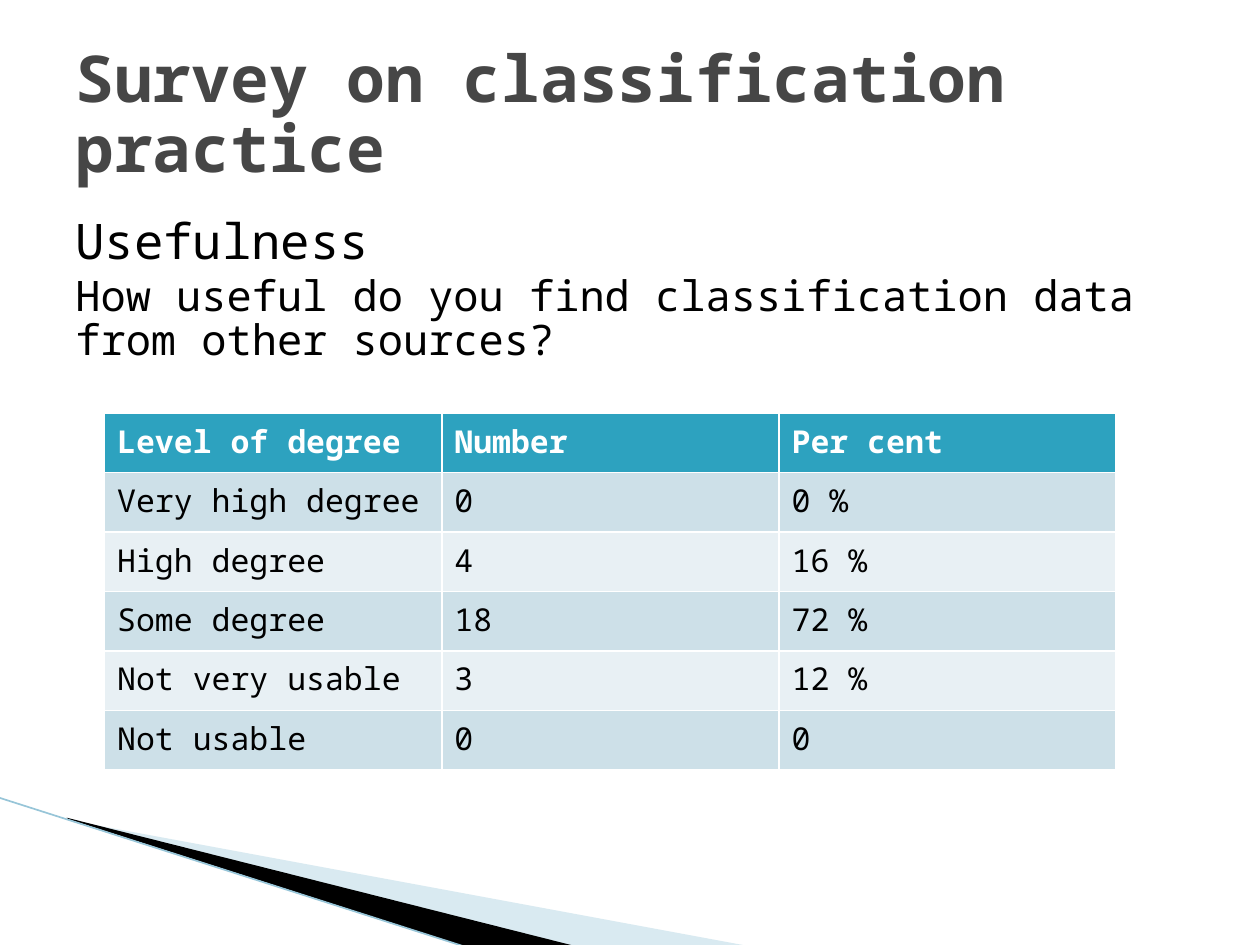
from lxml.etree import SubElement
from pptx import Presentation
from pptx.dml.color import RGBColor
from pptx.enum.shapes import MSO_CONNECTOR as Connector
from pptx.enum.text import MSO_ANCHOR as Anchor
from pptx.oxml.ns import qn
from pptx.util import Pt

PX = 9144  # EMU per px, 100 px to the inch
FONT = "Noto Sans Mono"
COLORS = {
    "title": "464646", "text": "000000", "white": "FFFFFF",
    "header": "2DA2BF", "odd_row": "CDE0E8", "even_row": "E8F0F4",
    "pale_wedge": "A0CBDC", "dark_wedge": "000000", "edge": "97C5D8",
}
ROWS = [
    ("Level of degree", "Number", "Per cent"),
    ("Very high degree", "0", "0 %"),
    ("High degree", "4", "16 %"),
    ("Some degree", "18", "72 %"),
    ("Not very usable", "3", "12 %"),
    ("Not usable", "0", "0"),
]


def color(name):
    return RGBColor.from_string(COLORS[name])


class SlideBuilder:
    def __init__(self, slide):
        self.slide = slide

    def fill_paragraph(self, paragraph, text, size, color_name="text", bold=False,
                       **spacing):
        run = paragraph.add_run()
        run.text = text
        run.font.color.rgb = color(color_name)
        for target, values in (
            (run.font, {"name": FONT, "size": Pt(size), "bold": bold}),
            (paragraph, spacing),
        ):
            for name, value in values.items():
                setattr(target, name, value)

    def text(self, box, lines, anchor=Anchor.TOP):
        """Add a text box; each line is a dict of arguments for fill_paragraph."""
        shape = self.slide.shapes.add_textbox(*(value * PX for value in box))
        frame = shape.text_frame
        frame.word_wrap = True
        frame.vertical_anchor = anchor
        for index, line in enumerate(lines):
            paragraph = frame.add_paragraph() if index else frame.paragraphs[0]
            self.fill_paragraph(paragraph, **line)

    def wedge(self, points, color_name, opacity=100):
        builder = self.slide.shapes.build_freeform(*points[0], scale=PX)
        builder.add_line_segments(points[1:], close=True)
        shape = builder.convert_to_shape()
        shape.shadow.inherit = False
        shape.line.fill.background()
        shape.fill.solid()
        shape.fill.fore_color.rgb = color(color_name)
        if opacity < 100:
            rgb = shape._element.spPr.find(".//" + qn("a:srgbClr"))
            SubElement(rgb, qn("a:alpha"), val=str(opacity * 1000))

    def line(self, start, end, color_name, width):
        ends = (value * PX for value in (*start, *end))
        connector = self.slide.shapes.add_connector(Connector.STRAIGHT, *ends)
        connector.line.color.rgb = color(color_name)
        connector.line.width = Pt(width)
        SubElement(connector._element.spPr, qn("a:effectLst"))

    def table(self, box, rows, size):
        shape = self.slide.shapes.add_table(
            len(rows), len(rows[0]), *(value * PX for value in box))
        for row_index, row in enumerate(rows):
            is_header = row_index == 0
            fill = "header" if is_header else "odd_row" if row_index % 2 else "even_row"
            for column_index, text in enumerate(row):
                cell = shape.table.cell(row_index, column_index)
                cell.fill.solid()
                cell.fill.fore_color.rgb = color(fill)
                self.fill_paragraph(cell.text_frame.paragraphs[0], text, size,
                                    "white" if is_header else "text", is_header)


def main():
    presentation = Presentation()
    presentation.slide_width = 1000 * PX
    presentation.slide_height = 750 * PX
    builder = SlideBuilder(presentation.slides.add_slide(presentation.slide_layouts[6]))

    builder.wedge([(55, 651), (595, 751), (456, 751), (55, 650)], "pale_wedge", 40)
    builder.wedge([(53, 649), (457, 751), (372, 752), (54, 650)], "dark_wedge")
    builder.line((-1, 633), (371, 752), "edge", 0.95)

    builder.text((50, 162, 900, 495), [
        {"text": "Usefulness", "size": 28},
        {"text": "How useful do you find classification data from other sources?",
         "size": 24, "space_before": Pt(4), "line_spacing": 0.88},
    ])
    builder.text((50, 30, 900, 125), [
        {"text": "Survey on classification practice", "size": 36.9,
         "color_name": "title", "bold": True, "line_spacing": 0.9},
    ], Anchor.MIDDLE)
    builder.table((83, 328, 803, 283), ROWS, 18)
    presentation.save("out.pptx")


if __name__ == "__main__":
    main()
